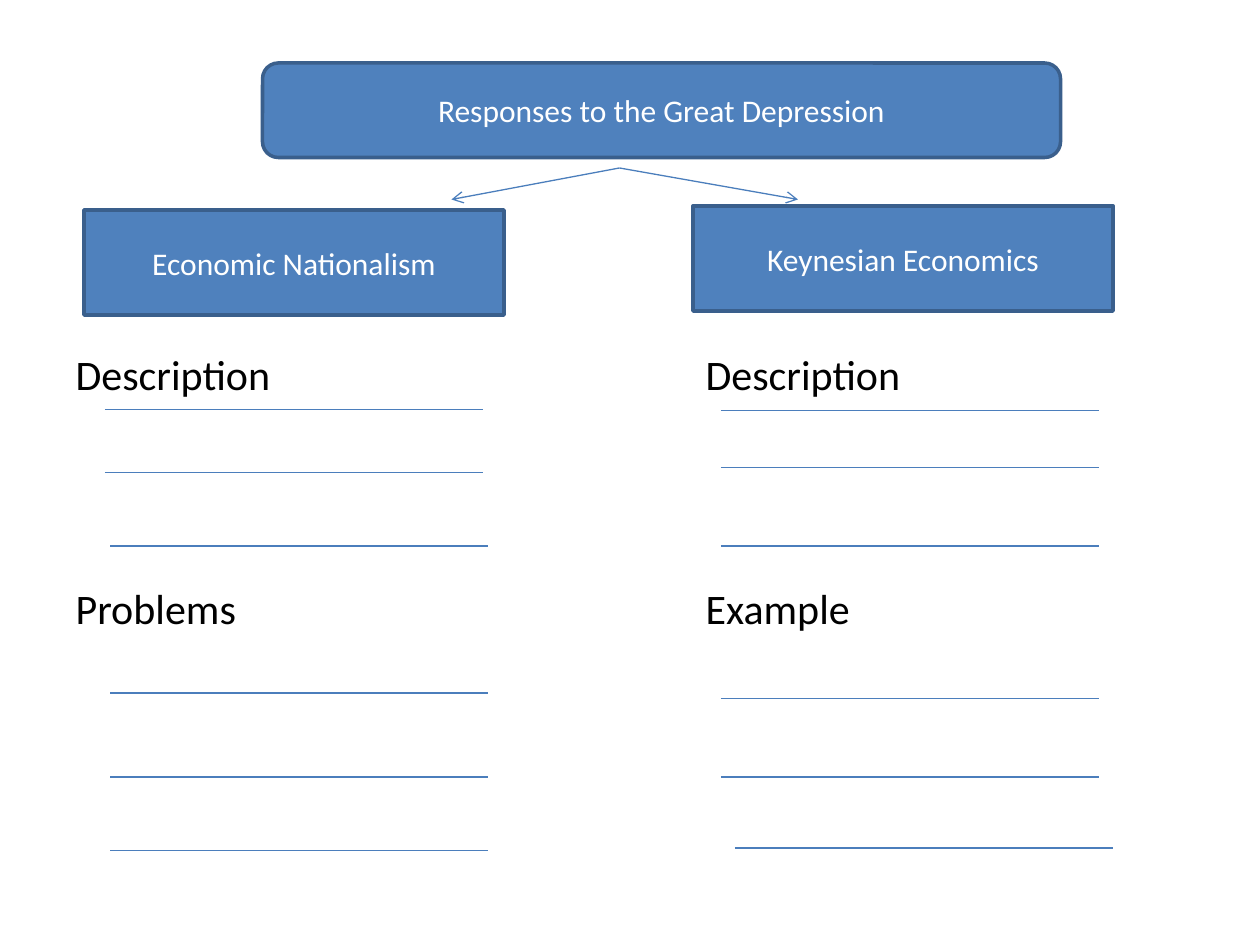
from lxml.etree import SubElement
from pptx import Presentation
from pptx.dml.color import RGBColor
from pptx.enum.shapes import MSO_CONNECTOR, MSO_SHAPE
from pptx.enum.text import MSO_ANCHOR, MSO_AUTO_SIZE, PP_ALIGN
from pptx.oxml.ns import qn
from pptx.util import Pt

BOX_FILL = RGBColor(0x4F, 0x81, 0xBD)
BOX_LINE = RGBColor(0x3A, 0x5F, 0x8C)
RULE_BLUE = RGBColor(0x4B, 0x7E, 0xBC)
WHITE = RGBColor(0xFF, 0xFF, 0xFF)
BLACK = RGBColor(0, 0, 0)

# Content: lengths in points
HEADING_COLUMNS = [("Description", "Problems"), ("Description", "Example")]
COLUMN_LEFT = 36
COLUMN_DISTANCE = 360
ROW_GAP = 105

BOXES = [  # text, preset shape, left, top, width, height
    ("Responses to the Great Depression", MSO_SHAPE.ROUNDED_RECTANGLE, 150, 36, 456, 54),
    ("Economic Nationalism", MSO_SHAPE.RECTANGLE, 48, 120, 240, 60),
    ("Keynesian Economics", MSO_SHAPE.RECTANGLE, 396, 117.75, 240, 60),
]

RULE_LENGTH = 216
WRITING_RULES = [  # left, heights of the rules
    (60, [234, 270]),
    (63, [312, 396, 444, 486]),
    (412, [234.75, 267, 312, 399, 444]),
    (420, [484.5]),
]

ARROW_START = (354, 96)
ARROW_ENDS = [(258, 114), (456, 114)]


def format_font(font, size, color):
    for name, value in {"name": "Calibri", "size": Pt(size), "bold": False}.items():
        setattr(font, name, value)
    font.color.rgb = color


def add_headings(body, left, headings):
    place = {"left": left, "top": 18, "width": 288, "height": 464.4}
    for name, value in place.items():
        setattr(body, name, Pt(value))
    frame = body.text_frame
    frame_format = {"auto_size": MSO_AUTO_SIZE.NONE, "word_wrap": True,
                    "vertical_anchor": MSO_ANCHOR.TOP, "margin_top": Pt(181)}
    for name, value in frame_format.items():
        setattr(frame, name, value)
    for index, heading in enumerate(headings):
        paragraph = frame.paragraphs[0] if index == 0 else frame.add_paragraph()
        paragraph.space_before = Pt(ROW_GAP * index)
        run = paragraph.add_run()
        run.text = heading
        format_font(run.font, 24, BLACK)
        # No bullet and no indent
        properties = paragraph._p.get_or_add_pPr()
        properties.set("marL", "0")
        properties.set("indent", "0")
        SubElement(properties, qn("a:buNone"))


def add_box(slide, text, preset, *place):
    shape = slide.shapes.add_shape(preset, *map(Pt, place))
    shape.shadow.inherit = False
    shape.fill.solid()
    shape.fill.fore_color.rgb = BOX_FILL
    shape.line.color.rgb = BOX_LINE
    shape.line.width = Pt(2)
    shape.text_frame.word_wrap = True
    shape.text_frame.vertical_anchor = MSO_ANCHOR.MIDDLE
    paragraph = shape.text_frame.paragraphs[0]
    paragraph.alignment = PP_ALIGN.CENTER
    run = paragraph.add_run()
    run.text = text
    format_font(run.font, 18, WHITE)


def add_line(slide, start, end, arrow=False):
    connector = slide.shapes.add_connector(MSO_CONNECTOR.STRAIGHT, *map(Pt, start + end))
    connector.line.color.rgb = RULE_BLUE
    connector.line.width = Pt(0.75)
    if arrow:
        SubElement(connector.line._get_or_add_ln(), qn("a:tailEnd"), type="arrow")
    SubElement(connector._element.spPr, qn("a:effectLst"))


def main():
    presentation = Presentation()
    presentation.slide_width, presentation.slide_height = Pt(720), Pt(540)
    slide = presentation.slides.add_slide(presentation.slide_layouts[3])

    # The heading stands in a rounded box, so the title placeholder goes
    title = slide.shapes.title._element
    title.getparent().remove(title)

    # One body placeholder per column
    for column, headings in enumerate(HEADING_COLUMNS):
        left = COLUMN_LEFT + column * COLUMN_DISTANCE
        add_headings(slide.placeholders[column + 1], left, headings)

    for box in BOXES:
        add_box(slide, *box)

    # Writing rules
    for left, heights in WRITING_RULES:
        for height in heights:
            add_line(slide, (left, height), (left + RULE_LENGTH, height))

    # Arrows to the two responses
    for end in ARROW_ENDS:
        add_line(slide, ARROW_START, end, arrow=True)

    presentation.save("out.pptx")


if __name__ == "__main__":
    main()
